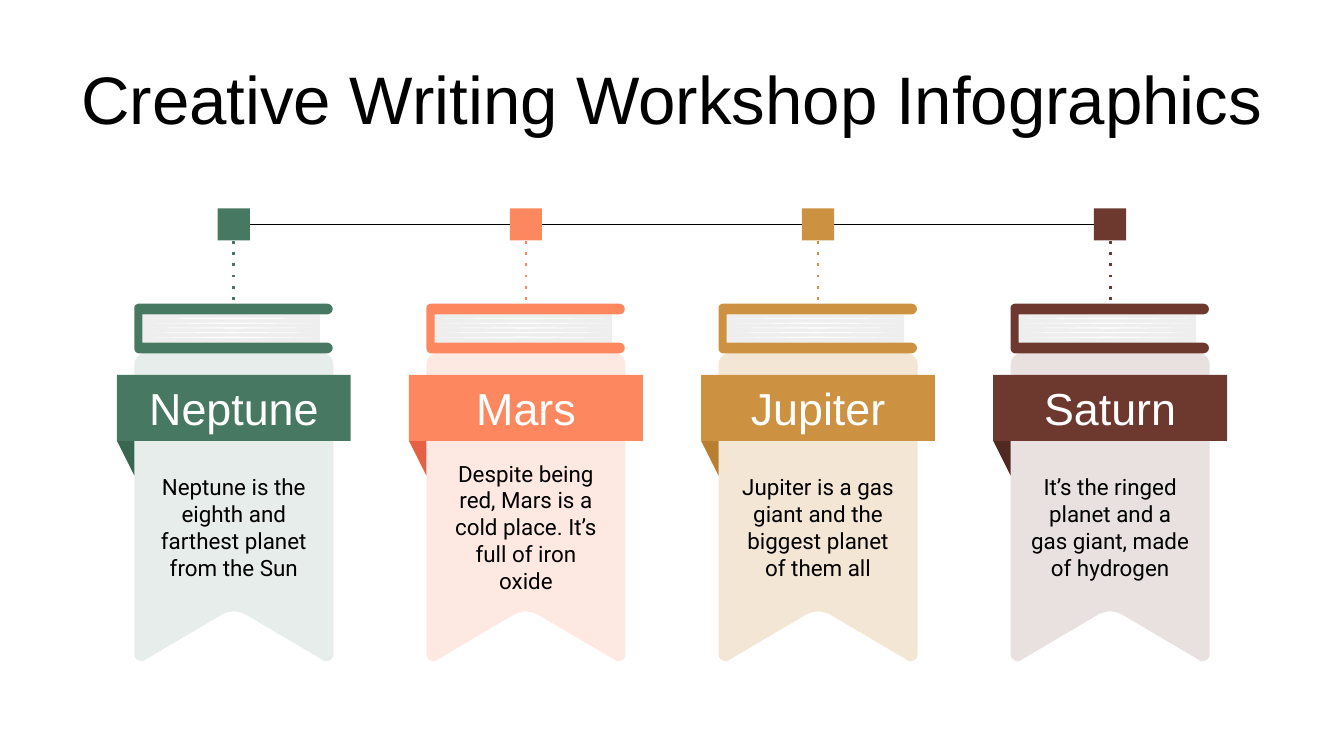
from lxml import etree
from pptx import Presentation
from pptx.dml.color import RGBColor
from pptx.enum.shapes import MSO_CONNECTOR, MSO_SHAPE
from pptx.enum.text import MSO_ANCHOR, MSO_AUTO_SIZE, PP_ALIGN
from pptx.oxml.ns import qn
from pptx.util import Inches, Pt

RECT = MSO_SHAPE.RECTANGLE
LINE = MSO_CONNECTOR.STRAIGHT
MIDDLE, TOP = MSO_ANCHOR.MIDDLE, MSO_ANCHOR.TOP
CENTER = PP_ALIGN.CENTER
NO_FIT = MSO_AUTO_SIZE.NONE

BLACK = RGBColor(0x00, 0x00, 0x00)
WHITE = RGBColor(0xFF, 0xFF, 0xFF)
PAPER = RGBColor(0xEE, 0xEE, 0xEE)
GREEN, PINE = RGBColor(0x47, 0x78, 0x61), RGBColor(0x39, 0x66, 0x51)
CORAL, RED = RGBColor(0xFD, 0x88, 0x60), RGBColor(0xE6, 0x60, 0x43)
GOLD, OCHRE = RGBColor(0xCC, 0x91, 0x41), RGBColor(0xB9, 0x7F, 0x31)
BROWN, UMBER = RGBColor(0x6D, 0x39, 0x2F), RGBColor(0x50, 0x29, 0x21)

# Name, text, main colour, fold colour, ribbon opacity in percent
PLANETS = [
    ("Neptune", "Neptune is the eighth and farthest planet from the Sun",
     GREEN, PINE, 13),
    ("Mars", "Despite being red, Mars is a cold place. It’s full of iron oxide",
     CORAL, RED, 18),
    ("Jupiter", "Jupiter is a gas giant and the biggest planet of them all",
     GOLD, OCHRE, 22),
    ("Saturn", "It’s the ringed planet and a gas giant, made of hydrogen",
     BROWN, UMBER, 15),
]
WIDE = 10
HIGH = WIDE * 9 / 16
LEFT, HEAD, CARD = 0.87, 1.55, 1.74
STEP = (WIDE - 2 * LEFT - CARD) / (len(PLANETS) - 1)
MID = CARD / 2

# Outlines inside a card: one point is a line, three points are a curve
HALF = [(0.24, 1.07), (0.18, 1.07), (0.13, 1.11), (0.13, 1.16),
        (0.13, 3.32), (0.13, 3.35), (0.16, 3.37), (0.18, 3.37),
        (0.19, 3.37), (0.2, 3.37), (0.21, 3.36),
        (0.77, 3.03), (0.8, 3.01), (0.84, 3), (0.87, 3)]
FLIP = [(CARD - x, y) for x, y in reversed(HALF)]
RIBBON = [HALF[:1]] + [
    side[a:b] for side, cuts in ((HALF, (1, 4, 5, 8, 11, 12, 15)),
                                 (FLIP, (1, 4, 5, 8, 11, 12, 15)))
    for a, b in zip(cuts, cuts[1:])]
COVER = [[(0.17, 0.71)], [(0.15, 0.71), (0.13, 0.72), (0.13, 0.74)],
         [(0.13, 1.04)], [(0.13, 1.06), (0.14, 1.08), (0.17, 1.08)],
         [(1.56, 1.08)], [(1.62, 1.08), (1.62, 1), (1.56, 1)],
         [(0.19, 1)], [(0.19, 0.79)],
         [(1.56, 0.79)], [(1.62, 0.79), (1.62, 0.71), (1.56, 0.71)]]
FOLD = [[(0, 1.73)], [(0.13, 1.99)], [(0.13, 1.73)]]


def paint(shape, color):
    shape.shadow.inherit = False
    shape.fill.solid()
    shape.fill.fore_color.rgb = color
    shape.line.fill.background()
    return shape


def trace(parts, steps=10):
    """Turn lines and Bezier curves into a list of points."""
    dots = []
    for part in parts:
        if len(part) == 1:
            dots += part
            continue
        curve = [dots[-1], *part]
        for n in range(1, steps + 1):
            t = n / steps
            mix = ((1 - t) ** 3, 3 * t * (1 - t) ** 2,
                   3 * t * t * (1 - t), t ** 3)
            dots.append(tuple(sum(m * p[axis] for m, p in zip(mix, curve))
                              for axis in (0, 1)))
    return dots


def outline(shapes, x, y, parts, color):
    dots = [(Inches(x + a), Inches(y + b)) for a, b in trace(parts)]
    form = shapes.build_freeform(*dots[0])
    form.add_line_segments(dots[1:])
    return paint(form.convert_to_shape(), color)


def block(shapes, x, y, w, h, color):
    return paint(shapes.add_shape(RECT, Inches(x), Inches(y),
                                  Inches(w), Inches(h)), color)


def rule(shapes, x1, y1, x2, y2, color, width):
    line = shapes.add_connector(LINE, Inches(x1), Inches(y1),
                                Inches(x2), Inches(y2))
    line.line.color.rgb = color
    line.line.width = Pt(width)
    etree.SubElement(line._element.spPr, qn("a:effectLst"))
    return line


def write(shape, text, size, font, color, side=0.1, anchor=MIDDLE):
    frame = shape.text_frame
    frame.word_wrap = True
    frame.auto_size = NO_FIT
    frame.vertical_anchor = anchor
    frame.margin_left = frame.margin_right = Inches(side)
    frame.margin_top = frame.margin_bottom = Inches(0.1)
    para = frame.paragraphs[0]
    para.text = text
    para.alignment = CENTER
    para.font.size = Pt(size)
    para.font.name = font
    para.font.color.rgb = color


def add_title(slide, x, y, w, h):
    title = slide.shapes.title
    title.left, title.top = Inches(x), Inches(y)
    title.width, title.height = Inches(w), Inches(h)
    write(title, "Creative Writing Workshop Infographics", 36, "Arial",
          BLACK, anchor=TOP)


def add_book(shapes, x, y, color):
    block(shapes, x + 0.19, y + 0.79, 1.32, 0.21, PAPER)
    outline(shapes, x, y, COVER, color)
    # Page edges
    for n in range(5):
        edge = 0.82 + n * 0.035
        leaf = [[(0.24, edge)], [(0.86, edge - 0.005)],
                [(1.47, edge)], [(0.86, edge + 0.005)]]
        outline(shapes, x, y, leaf, WHITE)


def add_card(slide, x, y, name, text, color, dark, alpha):
    shapes = slide.shapes.add_group_shape().shapes
    # Marker on the timeline with its dotted stem
    stem = rule(shapes, x + MID, y + 0.16, x + MID, y + 0.88, color, 1.5)
    edge = stem._element.spPr.find(qn("a:ln"))
    etree.SubElement(edge, qn("a:prstDash"), val="dot")
    mark = block(shapes, x + MID - 0.12, y, 0.24, 0.24, color)
    # Pale ribbon and book
    ribbon = outline(shapes, x, y, RIBBON, color)
    tint = ribbon._element.spPr.find(qn("a:solidFill"))[0]
    etree.SubElement(tint, qn("a:alpha"), val=str(alpha * 1000))
    add_book(shapes, x, y, color)
    # Name band with its fold, then the text
    outline(shapes, x, y, FOLD, dark)
    band = block(shapes, x, y + 1.24, CARD, 0.49, color)
    write(band, name, 24, "Arial", WHITE)
    note = shapes.add_textbox(Inches(x + 0.13), Inches(y + 1.93),
                              Inches(1.48), Inches(0.88))
    write(note, text, 12, "Roboto", BLACK, side=0.15)
    return mark


def main():
    deck = Presentation()
    deck.slide_width, deck.slide_height = Inches(WIDE), Inches(HIGH)
    slide = deck.slides.add_slide(deck.slide_layouts[5])
    add_title(slide, 0.5, 0.33, 9, 0.63)
    # Timeline behind the cards, joined to the outer markers
    axis = rule(slide.shapes, 1.86, 1.67, 8.14, 1.67, BLACK, 0.75)
    marks = [add_card(slide, LEFT + n * STEP, HEAD, *planet)
             for n, planet in enumerate(PLANETS)]
    axis.begin_connect(marks[0], 3)
    axis.end_connect(marks[-1], 1)
    deck.save("out.pptx")


if __name__ == "__main__":
    main()
